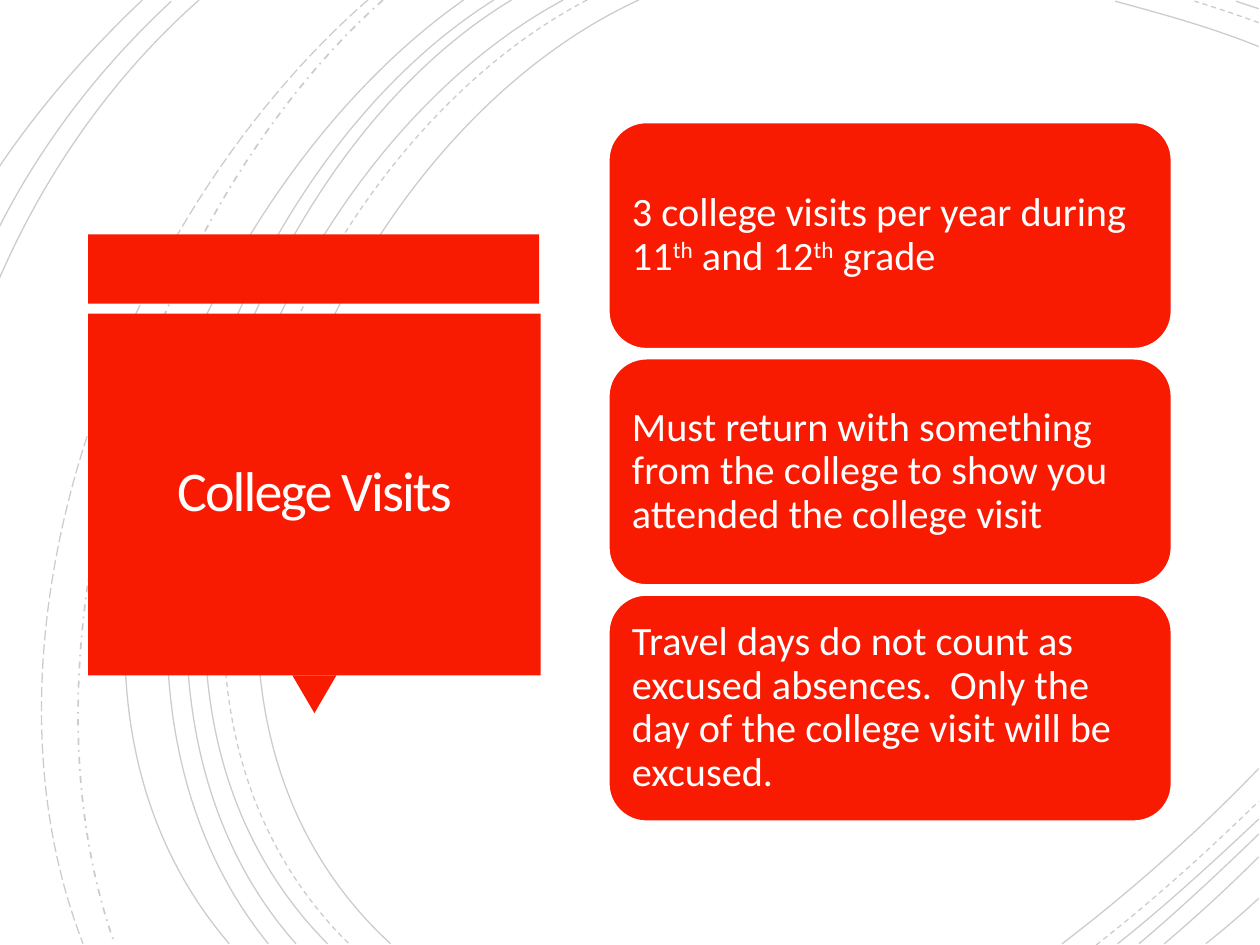
from dataclasses import dataclass

import lxml.etree
import pptx
import pptx.dml.color
import pptx.enum.dml
import pptx.enum.shapes
import pptx.enum.text
import pptx.oxml.ns
import pptx.oxml.xmlchemy
import pptx.util

Shapes = pptx.enum.shapes.MSO_SHAPE
Dash = pptx.enum.dml.MSO_LINE
Align = pptx.enum.text.PP_ALIGN
qualified = pptx.oxml.ns.qn

WIDTH, HEIGHT = pptx.util.Inches(10), pptx.util.Inches(7.5)
COLUMN, ROW = WIDTH / 100, HEIGHT / 75
COLORS = {"accent": "F81B02", "arc": "000000", "title": "FFFEFF", "white": "FFFFFF"}
FONT = "Calibri"
ARC_OPACITY = "20000"


@dataclass(frozen=True)
class Arc:
    points: tuple
    dash: Dash = Dash.SOLID
    weight: float = 0.75


@dataclass(frozen=True)
class Block:
    column: float
    row: float
    columns: float
    rows: float
    preset: Shapes = Shapes.RECTANGLE
    rotation: float = 0


@dataclass(frozen=True)
class TextStyle:
    size: float
    color: str
    spacing: float
    inset: float
    align: Align = Align.LEFT


@dataclass(frozen=True)
class Piece:
    text: str
    attributes: tuple = ()


ARCS = [
    Arc(((50.7, 0), (25.6, 11.5), (8.3, 54), (31, 74.9))),
    Arc(((99.9, 3.7), (96.2, 2.2), (92.2, 1.1), (88.5, 0.1))),
    Arc(((84.3, 74.9), (89.8, 70.7), (95.1, 66), (99.9, 61))),
    Arc(((46.6, 0), (22.6, 12.5), (6.3, 53.8), (27.7, 74.9)), Dash.DASH),
    Arc(((99.9, 1.8), (98.2, 1.2), (96.5, 0.6), (94.8, 0.1)), Dash.DASH),
    Arc(((87, 75), (91.5, 71.5), (95.8, 67.6), (99.9, 63.6)), Dash.DASH),
    Arc(((44.7, 0), (21.1, 12.7), (5, 53.7), (26, 74.9))),
    Arc(((99.9, 0.7), (99.3, 0.5), (98.7, 0.3), (98.1, 0.1))),
    Arc(((88.7, 74.9), (92.6, 71.8), (96.3, 68.4), (99.9, 65))),
    Arc(((40.6, 0), (18.5, 13.3), (5, 54.1), (23.5, 74.9))),
    Arc(((90.4, 74.9), (93.7, 72.1), (96.8, 69.2), (99.9, 66.2))),
    Arc(((39.2, 0), (17.2, 13.8), (3.8, 53.4), (21.3, 74.9))),
    Arc(((92.4, 74.9), (95, 72.7), (97.5, 70.4), (99.9, 68))),
    Arc(((36.8, 0), (15.8, 14.7), (-0.7, 52.9), (18.2, 74.9))),
    Arc(((95.7, 74.9), (97.1, 73.8), (98.5, 72.6), (99.9, 71.3))),
    Arc(((30.4, 0), (11.7, 16.6), (0.6, 50.9), (9.1, 74.9)), Dash.DASH_DOT, 1),
    Arc(((29.2, 0), (9.8, 16.9), (-3.1, 49.9), (6.6, 74.9)), Dash.LONG_DASH),
    Arc(((15.8, 0), (8.8, 6.2), (3.5, 13.9), (-0.1, 22.2))),
    Arc(((13.6, 0.1), (7.9, 5.4), (3.3, 11.4), (-0.1, 18.1))),
    Arc(((11.3, 0), (7.1, 4), (3.2, 8.4), (-0.1, 13.3))),
]

TITLE_BAR = Block(7, 18.6, 35.8, 5.5)
TITLE_POINTER = Block(23.2, 53.6, 3.5, 3, Shapes.ISOSCELES_TRIANGLE, 180)
TITLE_BLOCK = Block(7, 24.9, 35.9, 28.7)
TITLE = [Piece("College Visits", (("spc", "-110"),))]
TITLE_STYLE = TextStyle(32, "title", 0.85, 0.34, Align.CENTER)

RAISED = (("baseline", "30000"),)
CARD_STYLE = TextStyle(23, "white", 0.9, 0.1)
CARD_TOP, CARD_PITCH = 9.7, 18.75
CARDS = [
    [
        Piece("3 college visits per year during 11"),
        Piece("th", RAISED),
        Piece(" and 12"),
        Piece("th", RAISED),
        Piece(" grade"),
    ],
    [Piece("Must return with something from the college to show you attended the college visit")],
    [
        Piece(
            "Travel days do not count as excused absences.  "
            "Only the day of the college visit will be excused."
        )
    ],
]


def color(name: str) -> pptx.dml.color.RGBColor:
    return pptx.dml.color.RGBColor.from_string(COLORS[name])


def draw_arc(slide, arc: Arc) -> None:
    start, *rest = [(round(x * COLUMN), round(y * ROW)) for x, y in arc.points]
    builder = slide.shapes.build_freeform(*start, scale=1.0)
    builder.add_line_segments(rest, close=False)
    shape = builder.convert_to_shape()
    shape.shadow.inherit = False
    shape.fill.background()
    shape.line.color.rgb = color("arc")
    shape.line.width = pptx.util.Pt(arc.weight)
    shape.line.dash_style = arc.dash

    segments = list(shape._element.iter(qualified("a:lnTo")))
    outline = segments[0].getparent()
    curve = lxml.etree.SubElement(outline, qualified("a:cubicBezTo"))
    for segment in segments:
        curve.append(segment[0])
        outline.remove(segment)
    stroke = next(shape.line._ln.iter(qualified("a:srgbClr")))
    lxml.etree.SubElement(stroke, qualified("a:alpha")).set("val", ARC_OPACITY)


def draw_block(slide, block: Block):
    shape = slide.shapes.add_shape(
        block.preset,
        round(block.column * COLUMN),
        round(block.row * ROW),
        round(block.columns * COLUMN),
        round(block.rows * ROW),
    )
    shape.shadow.inherit = False
    shape.rotation = block.rotation
    shape.fill.solid()
    shape.fill.fore_color.rgb = color("accent")
    shape.line.fill.background()
    return shape


def write_text(shape, pieces: list[Piece], style: TextStyle) -> None:
    frame = shape.text_frame
    frame.word_wrap = True
    frame.vertical_anchor = pptx.enum.text.MSO_ANCHOR.MIDDLE
    inset = pptx.util.Inches(style.inset)
    frame.margin_left = frame.margin_right = inset
    frame.margin_top = frame.margin_bottom = inset
    paragraph = frame.paragraphs[0]
    paragraph.alignment = style.align
    paragraph.line_spacing = style.spacing
    paragraph.font.name = FONT
    paragraph.font.size = pptx.util.Pt(style.size)
    paragraph.font.color.rgb = color(style.color)
    for piece in pieces:
        run = paragraph.add_run()
        run.text = piece.text
        for name, value in piece.attributes:
            run._r.get_or_add_rPr().set(name, value)


def draw_card(slide, index: int, pieces: list[Piece]) -> None:
    row = CARD_TOP + index * CARD_PITCH
    card = draw_block(slide, Block(48.3, row, 44.7, 18, Shapes.ROUNDED_RECTANGLE))
    card.line.color.rgb = color("white")
    card.line.width = pptx.util.Pt(1.25)
    write_text(card, pieces, CARD_STYLE)


def main() -> None:
    presentation = pptx.Presentation()
    presentation.slide_width, presentation.slide_height = WIDTH, HEIGHT
    slide = presentation.slides.add_slide(presentation.slide_layouts[6])
    for arc in ARCS:
        draw_arc(slide, arc)
    for block in (TITLE_BAR, TITLE_POINTER):
        draw_block(slide, block)
    write_text(draw_block(slide, TITLE_BLOCK), TITLE, TITLE_STYLE)
    for index, pieces in enumerate(CARDS):
        draw_card(slide, index, pieces)
    presentation.save("out.pptx")


if __name__ == "__main__":
    main()
